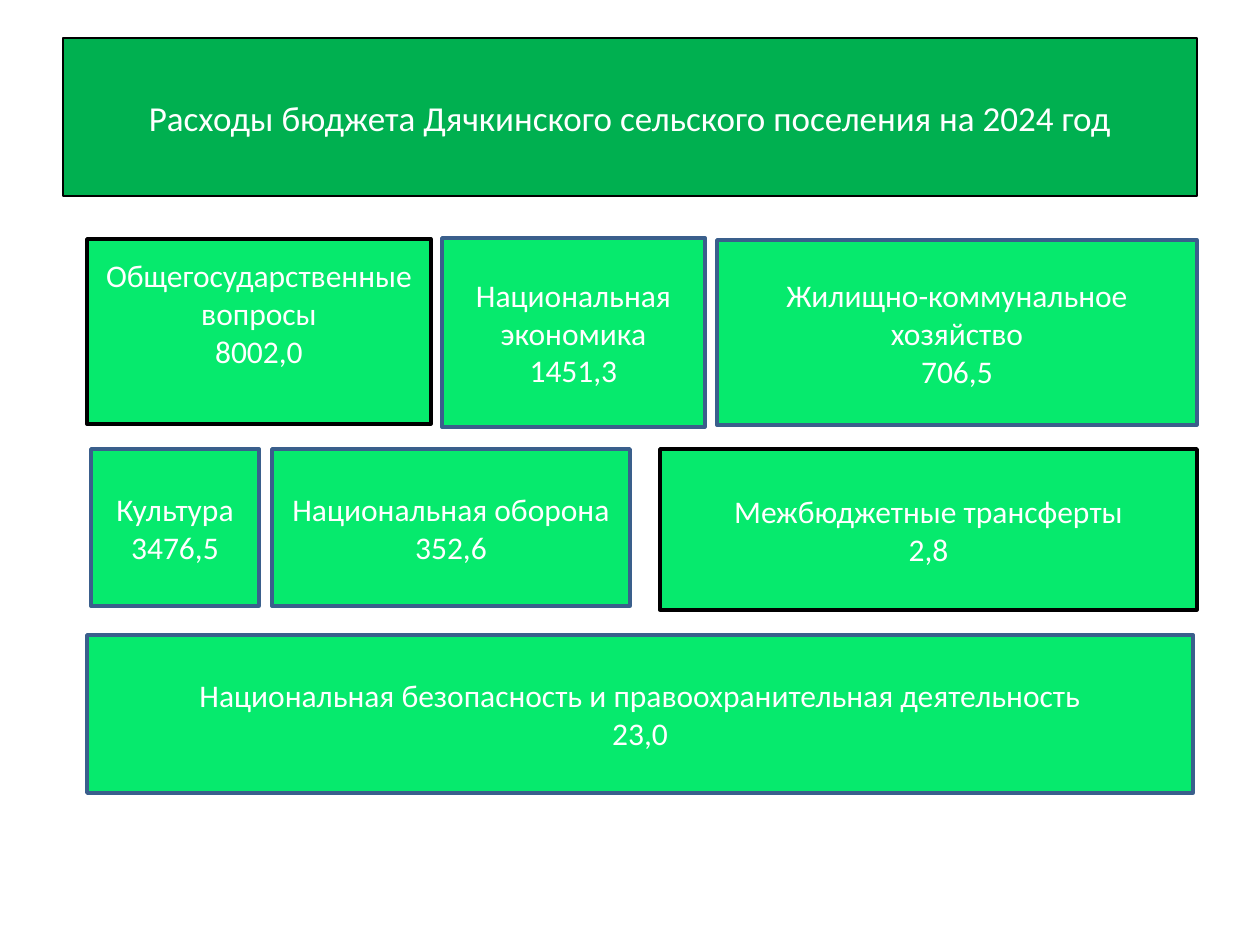
from pptx import Presentation
from pptx.dml.color import RGBColor
from pptx.enum.shapes import MSO_SHAPE
from pptx.enum.text import MSO_ANCHOR, PP_ALIGN
from pptx.util import Emu, Pt

PX = 914400 // 126
RECTANGLE = MSO_SHAPE.RECTANGLE
MIDDLE = MSO_ANCHOR.MIDDLE
CENTER = PP_ALIGN.CENTER

FONT = "Calibri"
WHITE, BLACK, BLUE = "FFFFFF", "000000", "3A5F8C"
TITLE_GREEN, ITEM_GREEN = "00B050", "06EA6D"

TITLE = "Расходы бюджета Дячкинского сельского поселения на 2024 год"
TITLE_BOX = (63, 38, 1134, 158)

# text, (left, top, width, height), outline, bottom inset
EXPENSES = [
    ("Общегосударственные вопросы\n8002,0", (87, 239, 344, 185), BLACK, 44),
    ("Национальная экономика\n1451,3", (442, 238, 263, 189), BLUE, 6),
    ("Жилищно-коммунальное хозяйство\n706,5", (717, 240, 480, 185), BLUE, 6),
    ("Культура\n3476,5", (91, 449, 168, 157), BLUE, 6),
    ("Национальная оборона 352,6", (272, 449, 358, 157), BLUE, 6),
    ("Межбюджетные трансферты\n2,8", (660, 449, 537, 161), BLACK, 6),
    ("Национальная безопасность и правоохранительная деятельность\n23,0",
     (87, 635, 1106, 158), BLUE, 6),
]


def px(length):
    return Emu(length * PX)


def color(value):
    return RGBColor.from_string(value)


def add_box(slide, text, place, fill, outline, outline_width, size, bottom_inset=6):
    """Add a filled rectangle with centred text, one paragraph per line."""
    box = slide.shapes.add_shape(RECTANGLE, *map(px, place))
    box.shadow.inherit = False
    box.fill.solid()
    box.fill.fore_color.rgb = color(fill)
    box.line.color.rgb = color(outline)
    box.line.width = Pt(outline_width)
    frame = box.text_frame
    frame.word_wrap = True
    frame.vertical_anchor = MIDDLE
    frame.margin_bottom = px(bottom_inset)
    frame.text = text
    for paragraph in frame.paragraphs:
        paragraph.alignment = CENTER
        for run in paragraph.runs:
            run.font.name = FONT
            run.font.size = Pt(size)
            run.font.color.rgb = color(WHITE)


def main():
    presentation = Presentation()
    presentation.slide_width, presentation.slide_height = px(1260), px(945)
    slide = presentation.slides.add_slide(presentation.slide_layouts[6])
    add_box(slide, TITLE, TITLE_BOX, TITLE_GREEN, BLACK, 0.75, 20)
    for text, place, outline, bottom_inset in EXPENSES:
        add_box(slide, text, place, ITEM_GREEN, outline, 2, 18, bottom_inset)
    presentation.save("out.pptx")


if __name__ == "__main__":
    main()
